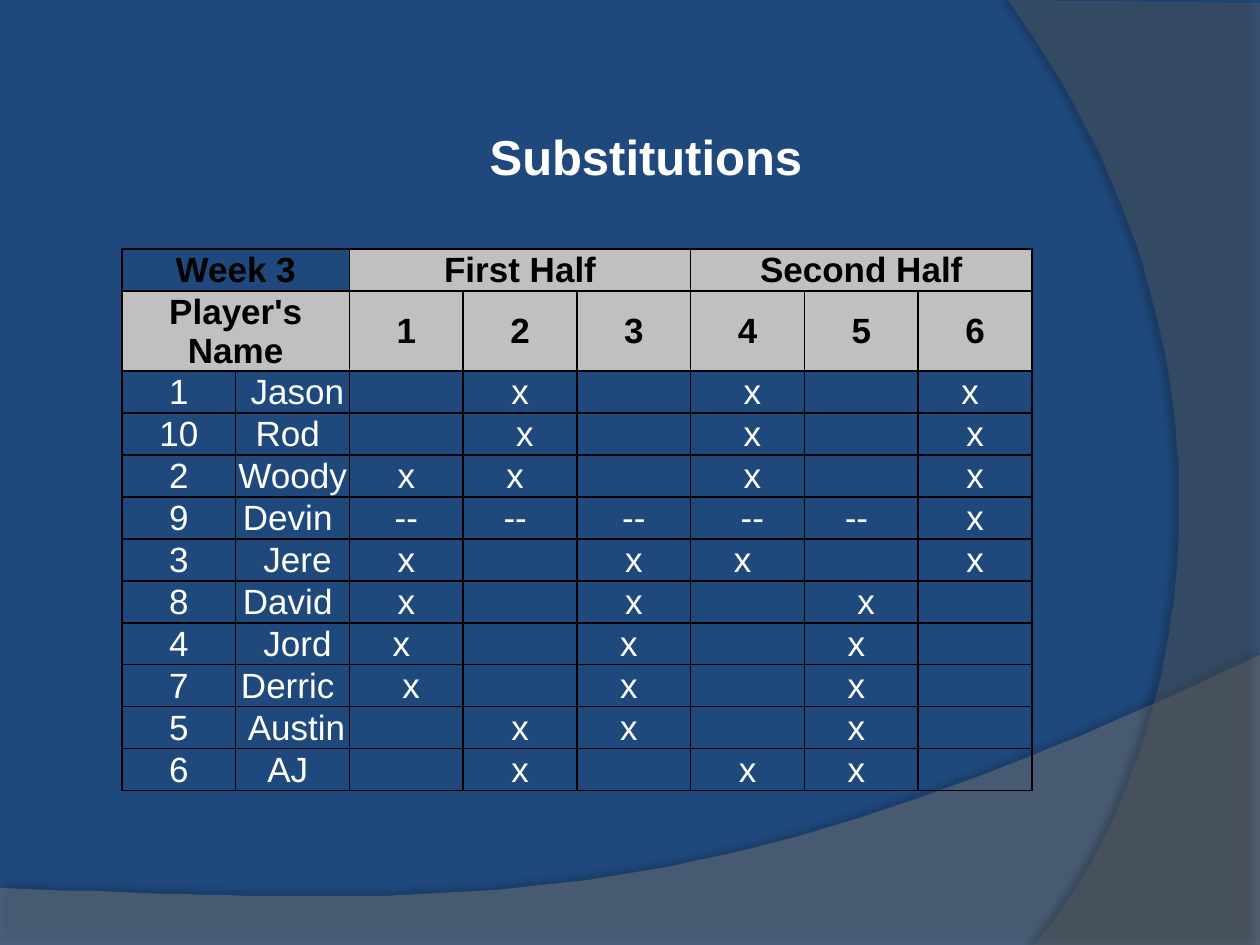
from lxml import etree
from pptx import Presentation, util as u
from pptx.dml.color import RGBColor
from pptx.enum import text as t
from pptx.oxml import parse_xml
from pptx.oxml.ns import nsdecls, qn

SCALE = u.Inches(1) / 126  # EMU in one px
NAVY = RGBColor(0x1F, 0x49, 0x7D)
WHITE = RGBColor(0xFF, 0xFF, 0xFF)
BLACK = RGBColor(0x00, 0x00, 0x00)
SILVER = RGBColor(0xC0, 0xC0, 0xC0)
GRAY = RGBColor(0x7F, 0x7F, 0x7F)
DARK_GRAY = RGBColor(0x5E, 0x5E, 0x5E)


def px(length):
    return u.Emu(round(length * SCALE))


def write(frame, words, size=20, color=WHITE, bold=False):
    para = frame.paragraphs[0]
    para.alignment = t.PP_ALIGN.CENTER
    span = para.add_run()
    span.text = words
    span.font.name = "Arial"
    span.font.size = u.Pt(size)
    span.font.bold = bold
    span.font.color.rgb = color


deck = Presentation()
deck.slide_width, deck.slide_height = px(1260), px(945)
page = deck.slides.add_slide(deck.slide_layouts[5])
page.background.fill.solid()
page.background.fill.fore_color.rgb = NAVY

# Translucent waves: straight corners, then one Bezier curve from the last corner
# colour, opacity %, corners, curve controls and end, shadow (opacity %, distance pt, angle)
waves = [
    (GRAY, 45, [(0, 888), (0, 945), (1260, 945), (1260, 655)],
     [(704, 919), (493, 906), (0, 888)], (35, 3.5, 270)),
    (DARK_GRAY, 40, [(1260, 3), (1260, 945), (1034, 945)],
     [(1178, 780), (1283, 378), (1008, 0)], (45, 4, 180)),
]
STEPS = 60
for color, opacity, corners, curve, (shade, distance, angle) in waves:
    controls = [corners[-1], *curve]
    points = list(corners)
    for step in range(1, STEPS + 1):
        f = step / STEPS
        weights = ((1 - f) ** 3, 3 * f * (1 - f) ** 2, 3 * f * f * (1 - f), f ** 3)
        points.append(tuple(sum(w * c[axis] for w, c in zip(weights, controls))
                            for axis in (0, 1)))
    builder = page.shapes.build_freeform(*points[0], scale=SCALE)
    builder.add_line_segments(points[1:], close=True)
    wave = builder.convert_to_shape()
    wave.fill.solid()
    wave.fill.fore_color.rgb = color
    wave.line.fill.background()
    tint = wave.fill._xPr.find(qn("a:solidFill"))[0]
    etree.SubElement(tint, qn("a:alpha"), val=str(opacity * 1000))
    wave._element.spPr.append(parse_xml(
        f'<a:effectLst {nsdecls("a")}><a:outerShdw blurRad="{u.Pt(4)}" '
        f'dist="{u.Pt(distance)}" dir="{angle * 60000}" algn="ctr" rotWithShape="0">'
        f'<a:srgbClr val="{BLACK}"><a:alpha val="{shade * 1000}"/></a:srgbClr>'
        '</a:outerShdw></a:effectLst>'))

# Title, kept in front of the waves
title = page.shapes.title
page.shapes._spTree.append(title._element)
title.left, title.top, title.width, title.height = px(147), px(105), px(998), px(101)
title.text_frame.vertical_anchor = t.MSO_ANCHOR.MIDDLE
write(title.text_frame, "Substitutions", size=28, bold=True)

# Substitution table
rows = [
    ("Week 3", "", "First Half", "", "", "Second Half", "", ""),
    ("Player's Name", "", "1", "2", "3", "4", "5", "6"),
    ("1", " Jason", "", "x", "", " x", "", "x "),
    ("10", "Rod ", "", " x", "", " x", "", "x"),
    ("2", "Woody", "x", "x ", "", " x", "", "x"),
    ("9", "Devin ", "--", "-- ", "--", " --", "-- ", "x"),
    ("3", " Jere", "x", "", "x", "x ", "", "x"),
    ("8", "David ", "x", "", "x", "", " x", ""),
    ("4", " Jord", "x ", "", "x ", "", "x ", ""),
    ("7", "Derric ", " x", "", "x ", "", "x ", ""),
    ("5", " Austin", "", "x", "x ", "", "x ", ""),
    ("6", "AJ ", "", "x", "", "x", "x ", ""),
]
table = page.shapes.add_table(len(rows), 8, px(122), px(249), px(910), px(542)).table
table.first_row = table.horz_banding = False
for column in table.columns:
    column.width = px(113.75)
for number, row in enumerate(table.rows):
    row.height = px(80 if number == 1 else 42)

for number, words in enumerate(rows):
    header = number < 2
    for column, word in enumerate(words):
        cell = table.cell(number, column)
        cell.vertical_anchor = t.MSO_ANCHOR.MIDDLE
        cell.margin_left = cell.margin_right = cell.margin_top = px(1)
        cell.margin_bottom = 0
        for side in ("lnL", "lnR", "lnT", "lnB"):
            cell._tc.get_or_add_tcPr().append(parse_xml(
                f'<a:{side} {nsdecls("a")} w="{u.Pt(1)}"><a:solidFill>'
                f'<a:srgbClr val="{BLACK}"/></a:solidFill></a:{side}>'))
        if header and (number, column) not in ((0, 0), (0, 1)):
            cell.fill.solid()
            cell.fill.fore_color.rgb = SILVER
        else:
            cell.fill.background()
        if word:
            write(cell.text_frame, word, color=BLACK if header else WHITE, bold=header)

# Header spans
for number, first, last in ((0, 0, 1), (0, 2, 4), (0, 5, 7), (1, 0, 1)):
    table.cell(number, first).merge(table.cell(number, last))

deck.save("out.pptx")
